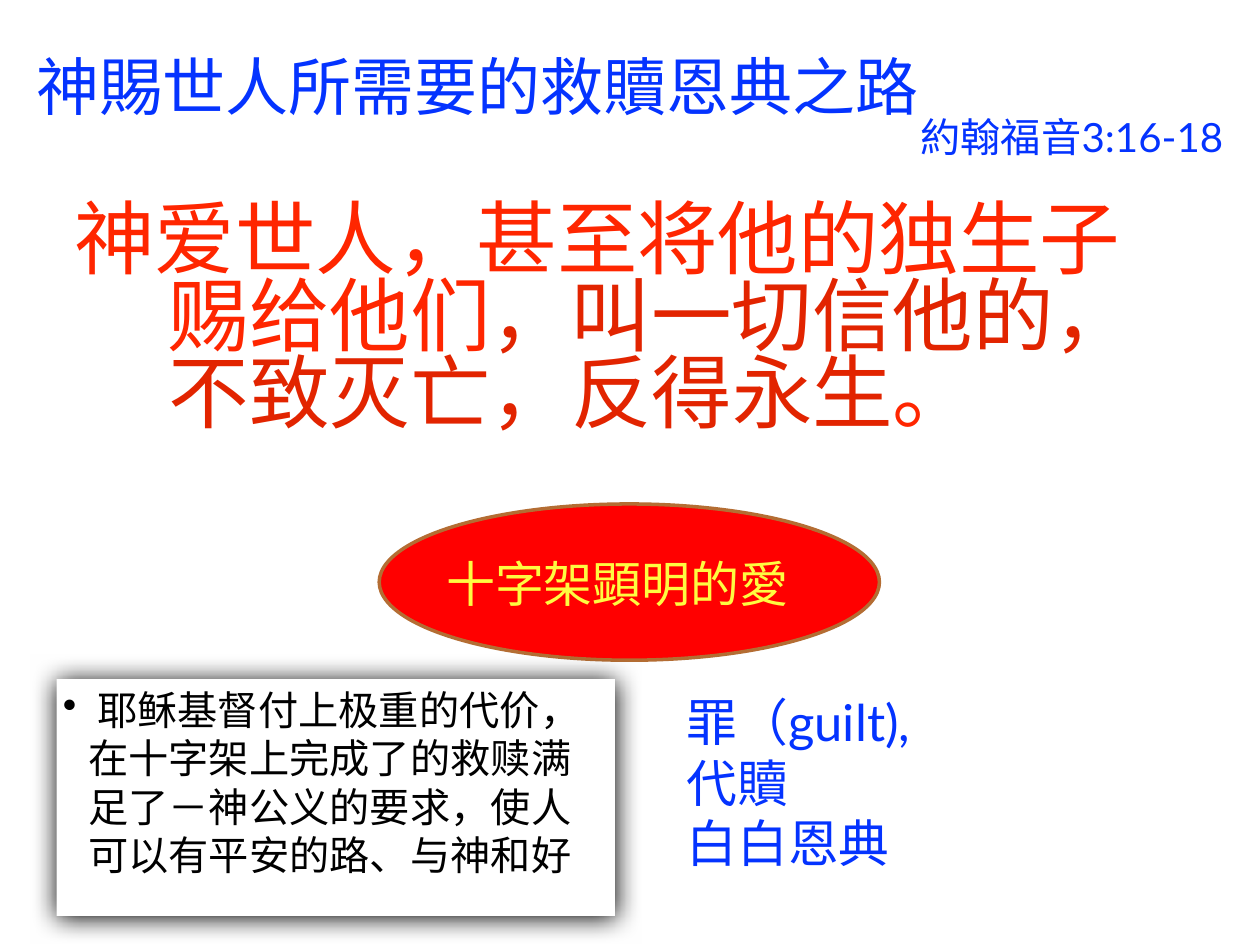
from lxml import etree
from pptx import Presentation
from pptx.dml.color import RGBColor
from pptx.enum.shapes import MSO_SHAPE as Shape
from pptx.enum.text import MSO_ANCHOR as Anchor, PP_ALIGN as Align
from pptx.oxml.ns import qn
from pptx.util import Inches, Pt

BLUE = RGBColor(0x04, 0x33, 0xFF)
BRIGHT_RED = RGBColor(0xFF, 0x26, 0x00)
DEEP_RED = RGBColor(0xE2, 0x24, 0x00)
RED = RGBColor(0xFF, 0x00, 0x00)
BROWN = RGBColor(0xB4, 0x6D, 0x33)
YELLOW = RGBColor(0xFE, 0xFB, 0x41)
WHITE = RGBColor(0xFF, 0xFF, 0xFF)
BLACK = RGBColor(0x00, 0x00, 0x00)
ARIAL, LATO = "Arial", "Lato"


class SlideBuilder:
    inset = Inches(0.05)

    def __init__(self, slide):
        self.slide = slide

    def frame(self, shape, anchor=Anchor.TOP):
        """Prepare the text frame of a shape and return it."""
        frame = shape.text_frame
        frame.word_wrap = True
        frame.vertical_anchor = anchor
        frame.margin_left = frame.margin_right = self.inset
        frame.margin_top = frame.margin_bottom = self.inset
        return frame

    def text_box(self, box, anchor=Anchor.TOP, parent=None):
        shapes = (parent or self.slide).shapes
        return self.frame(shapes.add_textbox(*map(Inches, box)), anchor)

    def shape(self, kind, box, fill, line=None, parent=None):
        shapes = (parent or self.slide).shapes
        shape = shapes.add_shape(kind, *map(Inches, box))
        shape.shadow.inherit = False
        shape.fill.solid()
        shape.fill.fore_color.rgb = fill
        if line is None:
            shape.line.fill.background()
        else:
            shape.line.color.rgb = line
            shape.line.width = Pt(2)
        return shape

    def paragraph(self, frame, runs, size, align=Align.LEFT, hanging=0,
                  spacing=1.0, bullet=None):
        """Add a paragraph; runs are (text, font name, colour) tuples."""
        first = frame.paragraphs[0]
        paragraph = frame.add_paragraph() if first.runs else first
        properties = paragraph._p.get_or_add_pPr()
        if hanging:
            properties.set("marL", str(Inches(hanging)))
            properties.set("indent", str(-Inches(hanging)))
        if bullet:
            etree.SubElement(properties, qn("a:buChar")).set("char", bullet)
        paragraph.alignment = align
        paragraph.line_spacing = spacing
        for text, name, colour in runs:
            run = paragraph.add_run()
            run.text = text
            run.font.name = name
            run.font.size = Pt(size)
            run.font.color.rgb = colour

    def glow_shadow(self, shape, blur, distance):
        """Give a shape an opaque black shadow that falls downwards."""
        effects = shape._element.spPr.find(qn("a:effectLst"))
        shadow = etree.SubElement(effects, qn("a:outerShdw"))
        for key, value in (("blurRad", Pt(blur)), ("dist", Pt(distance)),
                           ("dir", 90 * 60000), ("rotWithShape", 0)):
            shadow.set(key, str(value))
        etree.SubElement(shadow, qn("a:srgbClr")).set("val", str(BLACK))


def main():
    presentation = Presentation()
    presentation.slide_width = Inches(10)
    presentation.slide_height = Inches(7.5)
    slide = presentation.slides.add_slide(presentation.slide_layouts[6])
    builder = SlideBuilder(slide)

    verse = builder.text_box((0.54, 1.59, 8.92, 4))
    builder.paragraph(verse, [
        ("神爱世人，甚至将他的独生子赐给他们", ARIAL, BRIGHT_RED),
        ("，叫一切信他的，不致灭亡，反得永生", ARIAL, DEEP_RED),
        ("。", ARIAL, BRIGHT_RED),
    ], 46, hanging=0.75, spacing=0.8)

    title = builder.text_box((0.24, 0.33, 9.52, 1.24))
    builder.paragraph(title, [("神賜世人所需要的救贖恩典之路", LATO, BLUE)], 36,
                      hanging=0.75)
    builder.paragraph(title, [("約翰福音3:16-18", LATO, BLUE)], 23,
                      Align.RIGHT, hanging=0.75, spacing=0.75)

    love = slide.shapes.add_group_shape()
    builder.shape(Shape.OVAL, (3.01, 4, 3.97, 1.24), RED, BROWN, love)
    love_label = builder.text_box((3.3, 4.28, 3.2, 0.69), Anchor.MIDDLE, love)
    builder.paragraph(love_label, [("十字架顕明的愛", ARIAL, YELLOW)], 28,
                      Align.CENTER)

    card = builder.shape(Shape.RECTANGLE, (0.45, 5.39, 4.43, 1.88), WHITE)
    builder.glow_shadow(card, blur=15, distance=0.7)
    builder.paragraph(builder.frame(card), [
        (" ", LATO, BLACK),
        ("耶稣基督付上极重的代价，在十字架上完成了的救赎满足了－神公义的要求，"
         "使人可以有平安的路、与神和好", ARIAL, BLACK),
    ], 23, hanging=0.2, bullet="•")

    grace = builder.text_box((5.4, 5.43, 2.63, 1.81))
    for line in ("罪（guilt),", "代贖", "白白恩典"):
        builder.paragraph(grace, [(line, LATO, BLUE)], 29)

    presentation.save("out.pptx")


if __name__ == "__main__":
    main()
